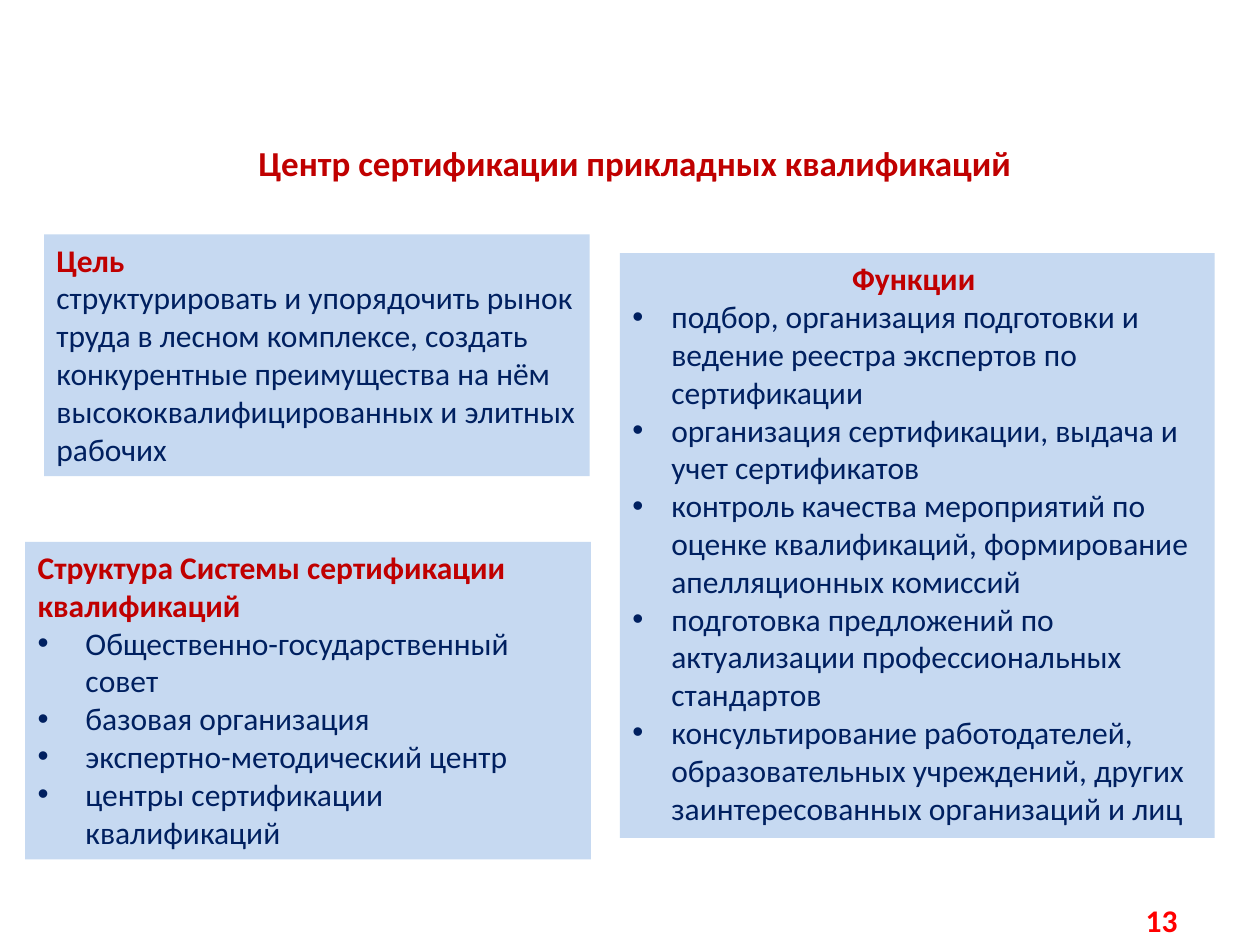
from lxml.etree import SubElement
from pptx import Presentation
from pptx.dml.color import RGBColor
from pptx.enum.shapes import MSO_SHAPE
from pptx.enum.text import MSO_ANCHOR, PP_ALIGN
from pptx.oxml.ns import qn
from pptx.util import Inches, Pt

DARK_RED = RGBColor(0xC0, 0x00, 0x00)
RED = RGBColor(0xFF, 0x00, 0x00)
NAVY = RGBColor(0x00, 0x20, 0x60)
PALE_BLUE = RGBColor(0xC6, 0xD9, 0xF1)

GOAL = [
    "структурировать и упорядочить рынок труда в лесном комплексе, создать "
    "конкурентные преимущества на нём высококвалифицированных и элитных рабочих",
]
STRUCTURE = [
    "Общественно-государственный совет",
    "базовая организация",
    "экспертно-методический центр",
    "центры сертификации квалификаций",
]
FUNCTIONS = [
    "подбор, организация подготовки и ведение реестра экспертов по сертификации",
    "организация сертификации, выдача и учет сертификатов",
    "контроль качества мероприятий по оценке квалификаций, формирование "
    "апелляционных комиссий",
    "подготовка предложений по актуализации профессиональных стандартов",
    "консультирование работодателей, образовательных учреждений, других "
    "заинтересованных организаций и лиц",
]


def add_bullet(para, indent):
    properties = para._p.get_or_add_pPr()
    properties.set("marL", str(Inches(indent)))
    properties.set("indent", str(-Inches(indent)))
    SubElement(properties, qn("a:buFont"), typeface="Arial")
    SubElement(properties, qn("a:buChar"), char="•")


def write(para, text, size=18, color=NAVY, bold=False, align=PP_ALIGN.LEFT, indent=0):
    para.alignment = align
    if indent:
        add_bullet(para, indent)
    span = para.add_run()
    span.text = text
    span.font.name = "Calibri"
    span.font.size = Pt(size)
    span.font.bold = bold
    span.font.color.rgb = color


def add_label(page, box, text, **style):
    label = page.shapes.add_textbox(*map(Inches, box))
    label.text_frame.word_wrap = True
    write(label.text_frame.paragraphs[0], text, bold=True, align=PP_ALIGN.CENTER, **style)


def add_panel(page, box, heading, lines, heading_align=PP_ALIGN.LEFT, indent=0):
    panel = page.shapes.add_shape(MSO_SHAPE.RECTANGLE, *map(Inches, box))
    panel.shadow.inherit = False
    panel.fill.solid()
    panel.fill.fore_color.rgb = PALE_BLUE
    panel.line.fill.background()
    frame = panel.text_frame
    frame.word_wrap = True
    frame.vertical_anchor = MSO_ANCHOR.TOP
    write(frame.paragraphs[0], heading, color=DARK_RED, bold=True, align=heading_align)
    for line in lines:
        write(frame.add_paragraph(), line, indent=indent)


def main():
    deck = Presentation()
    deck.slide_width = Inches(10)
    deck.slide_height = Inches(7.5)
    page = deck.slides.add_slide(deck.slide_layouts[6])
    add_label(page, (0.59, 1.07, 8.9, 0.44),
              "Центр сертификации прикладных квалификаций", size=20, color=DARK_RED)
    add_panel(page, (0.2, 4.3, 4.49, 2.52),
              "Структура Системы сертификации квалификаций", STRUCTURE, indent=0.38)
    add_panel(page, (4.92, 2.01, 4.72, 4.64), "Функции ", FUNCTIONS,
              heading_align=PP_ALIGN.CENTER, indent=0.31)
    add_panel(page, (0.35, 1.86, 4.33, 1.92), "Цель", GOAL)
    add_label(page, (8.9, 7.1, 0.64, 0.4), "13", color=RED)
    deck.save("out.pptx")


if __name__ == "__main__":
    main()
